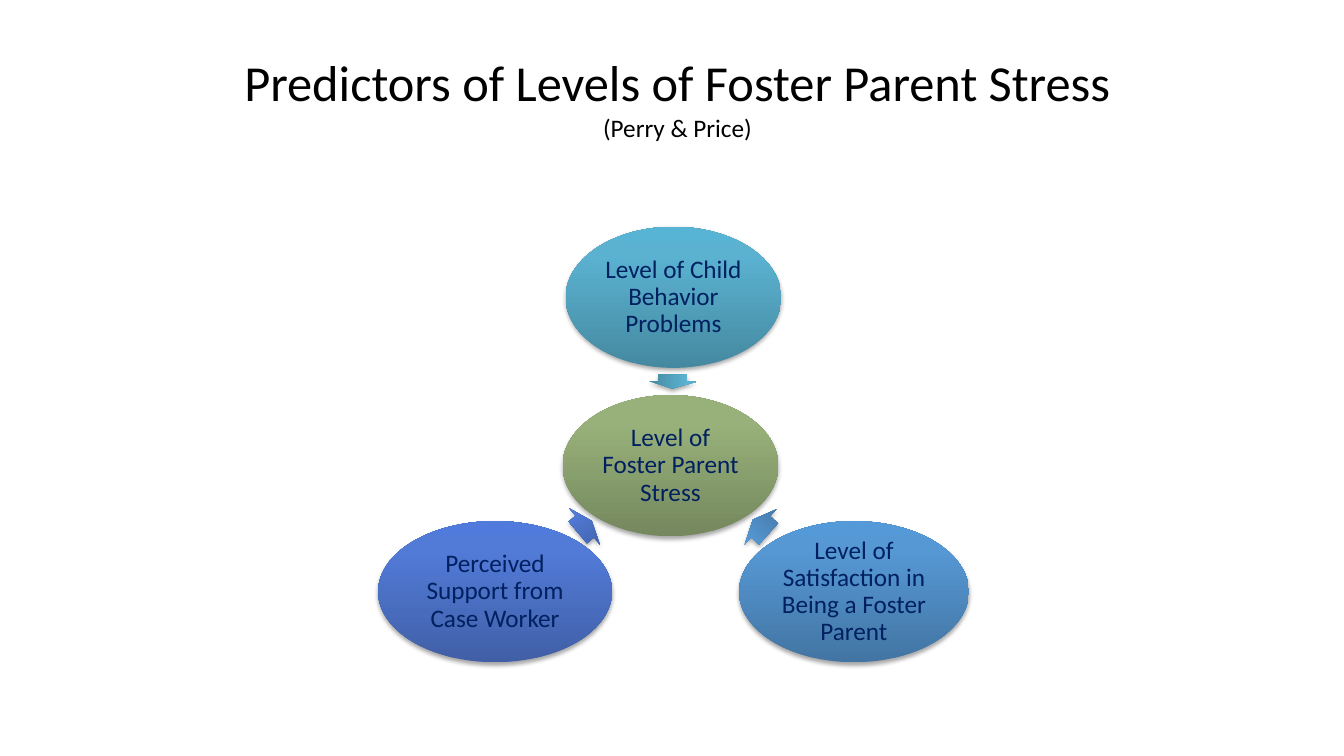
from dataclasses import dataclass

from lxml.etree import SubElement
from pptx import Presentation
from pptx.dml.color import RGBColor
from pptx.enum.shapes import MSO_SHAPE
from pptx.enum.text import MSO_ANCHOR, MSO_AUTO_SIZE, PP_ALIGN
from pptx.oxml import parse_xml
from pptx.oxml.ns import nsdecls, qn
from pptx.shapes.autoshape import Shape
from pptx.slide import Slide
from pptx.text.text import _Paragraph
from pptx.util import Inches, Pt

BLACK = RGBColor(0x00, 0x00, 0x00)
NAVY = RGBColor(0x00, 0x20, 0x60)
Gradient = tuple[RGBColor, RGBColor, RGBColor]
GREEN = (RGBColor(0x75, 0x88, 0x5E), RGBColor(0x98, 0xB1, 0x7A), RGBColor(0x99, 0xB3, 0x79))
TEAL = (RGBColor(0x45, 0x89, 0xA1), RGBColor(0x5A, 0xB2, 0xD0), RGBColor(0x58, 0xB4, 0xD4))
SKY = (RGBColor(0x42, 0x75, 0xA3), RGBColor(0x56, 0x98, 0xD4), RGBColor(0x54, 0x99, 0xD8))
ROYAL = (RGBColor(0x40, 0x5F, 0xA6), RGBColor(0x52, 0x7B, 0xD8), RGBColor(0x50, 0x7A, 0xDC))
STOPS = (0, 80, 100)
FONT = "Calibri"
OVAL_HEIGHT = 1.4
ARROW_HEIGHT = 0.47
OVAL_FRAME = {
    "word_wrap": True,
    "vertical_anchor": MSO_ANCHOR.MIDDLE,
    "margin_left": Inches(0.03),
    "margin_right": Inches(0.03),
    "margin_top": Inches(0.03),
    "margin_bottom": Inches(0.03),
}
TITLE_FRAME = {
    "word_wrap": True,
    "auto_size": MSO_AUTO_SIZE.NONE,
    "vertical_anchor": MSO_ANCHOR.MIDDLE,
}


@dataclass
class Arrow:
    left: float
    top: float
    width: float
    rotation: float


@dataclass
class Oval:
    text: str
    left: float
    top: float
    width: float
    colors: Gradient
    arrow: Arrow | None = None


OVALS = [
    Oval("Level of Foster Parent Stress", 5.58, 3.92, 2.14, GREEN),
    Oval("Level of Child Behavior Problems", 5.61, 2.25, 2.14, TEAL,
         Arrow(6.6, 3.55, 0.14, 90.8)),
    Oval("Level of Satisfaction in Being a Foster Parent", 7.33, 5.17, 2.28, SKY,
         Arrow(7.44, 4.99, 0.21, 222.1)),
    Oval("Perceived Support from Case Worker", 3.75, 5.17, 2.32, ROYAL,
         Arrow(5.71, 4.99, 0.18, 320)),
]


def apply(target: object, values: dict[str, object]) -> None:
    for name, value in values.items():
        setattr(target, name, value)


def add_run(p: _Paragraph, text: str, size: int, color: RGBColor) -> None:
    r = p.add_run()
    r.text = text
    apply(r.font, {"name": FONT, "size": Pt(size)})
    r.font.color.rgb = color


def add_shadow(sp: Shape) -> None:
    sp.shadow.inherit = False
    effects = sp._element.spPr.find(qn("a:effectLst"))
    shadow = SubElement(effects, qn("a:outerShdw"), blurRad="40000", dist="23000",
                        dir="5400000", rotWithShape="0")
    color = SubElement(shadow, qn("a:srgbClr"), val="000000")
    SubElement(color, qn("a:alpha"), val="35000")


def add_gradient_shape(s: Slide, kind: MSO_SHAPE, left: float, top: float,
                       width: float, height: float, colors: Gradient) -> Shape:
    sp = s.shapes.add_shape(kind, Inches(left), Inches(top), Inches(width), Inches(height))
    stops = "".join(f'<a:gs pos="{pos * 1000}"><a:srgbClr val="{color}"/></a:gs>'
                    for pos, color in zip(STOPS, colors))
    sp._element.spPr.find(qn("a:prstGeom")).addnext(parse_xml(
        f'<a:gradFill {nsdecls("a")} rotWithShape="1"><a:gsLst>{stops}</a:gsLst>'
        '<a:lin ang="16200000" scaled="0"/></a:gradFill>'))
    sp.line.fill.background()
    add_shadow(sp)
    return sp


def add_arrow(s: Slide, arrow: Arrow, colors: Gradient) -> None:
    sp = add_gradient_shape(s, MSO_SHAPE.RIGHT_ARROW, arrow.left, arrow.top,
                            arrow.width, ARROW_HEIGHT, colors)
    sp.adjustments[0] = 0.6
    sp.adjustments[1] = 0.5
    sp.rotation = arrow.rotation


def add_oval(s: Slide, oval: Oval) -> None:
    if oval.arrow:
        add_arrow(s, oval.arrow, oval.colors)
    sp = add_gradient_shape(s, MSO_SHAPE.OVAL, oval.left, oval.top,
                            oval.width, OVAL_HEIGHT, oval.colors)
    tf = sp.text_frame
    apply(tf, OVAL_FRAME)
    p = tf.paragraphs[0]
    apply(p, {"alignment": PP_ALIGN.CENTER, "line_spacing": 0.9})
    add_run(p, oval.text, 18, NAVY)


def add_title(s: Slide) -> None:
    sp = s.shapes.title
    apply(sp, {"left": Inches(1.22), "top": Inches(0.25),
               "width": Inches(11), "height": Inches(1.42)})
    tf = sp.text_frame
    apply(tf, TITLE_FRAME)
    p = tf.paragraphs[0]
    p.alignment = PP_ALIGN.CENTER
    add_run(p, "Predictors of Levels of Foster Parent Stress", 36, BLACK)
    p.add_line_break()
    add_run(p, "(Perry & Price)", 18, BLACK)


def main() -> None:
    prs = Presentation()
    apply(prs, {"slide_width": Inches(13.33), "slide_height": Inches(7.5)})
    s = prs.slides.add_slide(prs.slide_layouts[5])
    add_title(s)
    for oval in OVALS:
        add_oval(s, oval)
    prs.save("out.pptx")


if __name__ == "__main__":
    main()
